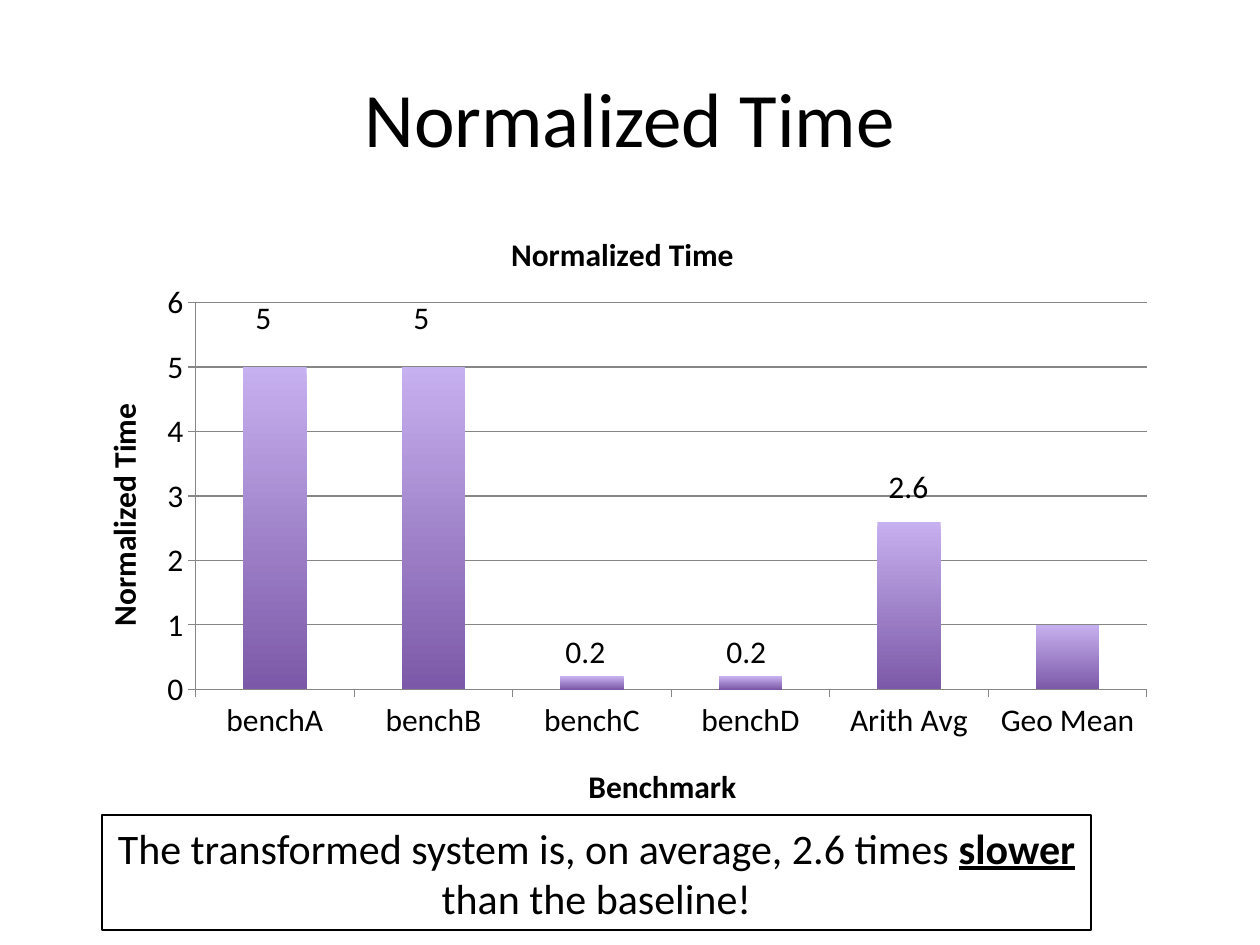
import pptx
import pptx.chart.data
import pptx.dml.color
import pptx.enum.chart
import pptx.enum.shapes
import pptx.enum.text
import pptx.oxml
import pptx.oxml.ns
import pptx.util

PX = 914400 // 126
BLACK = pptx.dml.color.RGBColor(0x00, 0x00, 0x00)
WHITE = pptx.dml.color.RGBColor(0xFF, 0xFF, 0xFF)
GREY = pptx.dml.color.RGBColor(0x86, 0x86, 0x86)
LILAC = pptx.dml.color.RGBColor(0xC7, 0xB0, 0xEF)
PURPLE = pptx.dml.color.RGBColor(0x7C, 0x59, 0xA8)
FONT = "Calibri"
CENTER = pptx.enum.text.PP_ALIGN.CENTER
MIDDLE = pptx.enum.text.MSO_ANCHOR.MIDDLE
TICK = pptx.enum.chart.XL_TICK_MARK
CATEGORIES = ["benchA", "benchB", "benchC", "benchD", "Arith Avg", "Geo Mean"]
VALUES = [5, 5, 0.2, 0.2, 2.6, 1]


def emu(box):
    return [length * PX for length in box]


def style(font, size, bold=False):
    font.name = FONT
    font.size = pptx.util.Pt(size)
    font.bold = bold
    font.color.rgb = BLACK


def add_span(para, text, size, bold=False, underline=False):
    span = para.add_run()
    span.text = text
    style(span.font, size, bold)
    span.font.underline = underline


def add_title(page, box):
    frame = page.shapes.add_textbox(*emu(box)).text_frame
    frame.word_wrap = True
    frame.vertical_anchor = MIDDLE
    para = frame.paragraphs[0]
    para.alignment = CENTER
    add_span(para, "Normalized Time", 44)


def set_layout(parent, inner=False, **fractions):
    """Place a chart part by fractions of the chart area."""
    qn = pptx.oxml.ns.qn
    old = parent.find(qn("c:layout"))
    if old is not None:
        parent.remove(old)
    target = '<c:layoutTarget val="inner"/>' if inner else ""
    modes = "".join(f'<c:{key}Mode val="edge"/>' for key in "xy")
    sizes = "".join(f'<c:{key} val="{value}"/>' for key, value in fractions.items())
    layout = pptx.oxml.parse_xml(
        f'<c:layout {pptx.oxml.ns.nsdecls("c")}><c:manualLayout>'
        f"{target}{modes}{sizes}</c:manualLayout></c:layout>")
    parent.insert(0 if parent.find(qn("c:tx")) is None else 1, layout)


def name_part(part, text, x, y):
    """Give a chart or an axis its title."""
    title = part.chart_title if hasattr(part, "chart_title") else part.axis_title
    add_span(title.text_frame.paragraphs[0], text, 18, bold=True)
    element = title.text_frame._txBody.getparent().getparent()
    set_layout(element, x=x, y=y)


def add_time_chart(page, box):
    data = pptx.chart.data.CategoryChartData()
    data.categories = CATEGORIES
    data.add_series("Normalized Time", VALUES)
    kind = pptx.enum.chart.XL_CHART_TYPE.COLUMN_CLUSTERED
    chart = page.shapes.add_chart(kind, *emu(box), data).chart
    style(chart.font, 18)
    chart.has_legend = False

    # Titles and plot area
    name_part(chart, "Normalized Time", 0.4, 0.05)
    name_part(chart.category_axis, "Benchmark", 0.47, 0.89)
    name_part(chart.value_axis, "Normalized Time", 0.03, 0.32)
    plot_area = chart.element.find(".//" + pptx.oxml.ns.qn("c:plotArea"))
    set_layout(plot_area, inner=True, x=0.12, y=0.17, w=0.86, h=0.61)

    # Axes
    for axis in (chart.category_axis, chart.value_axis):
        axis.major_tick_mark = TICK.OUTSIDE
        axis.minor_tick_mark = TICK.NONE
        axis.format.line.color.rgb = GREY
        style(axis.tick_labels.font, 18)
    scale = chart.value_axis
    scale.minimum_scale, scale.maximum_scale, scale.major_unit = 0, 6, 1
    scale.has_major_gridlines = True
    scale.major_gridlines.format.line.color.rgb = GREY

    # Bars
    plot = chart.plots[0]
    plot.gap_width = 150
    plot.vary_by_categories = False
    fill = plot.series[0].format.fill
    fill.gradient()
    fill.gradient_angle = 270
    for stop, color in zip(fill.gradient_stops, (LILAC, PURPLE)):
        stop.color.rgb = color


def add_conclusion(page, box):
    kind = pptx.enum.shapes.MSO_SHAPE.RECTANGLE
    panel = page.shapes.add_shape(kind, *emu(box))
    panel.shadow.inherit = False
    panel.fill.solid()
    panel.fill.fore_color.rgb = WHITE
    panel.line.color.rgb = BLACK
    panel.line.width = pptx.util.Pt(0.75)
    frame = panel.text_frame
    frame.word_wrap = False
    frame.vertical_anchor = MIDDLE
    first, second = frame.paragraphs[0], frame.add_paragraph()
    first.alignment = second.alignment = CENTER
    add_span(first, "The transformed system is, on average, 2.6 times ", 24)
    add_span(first, "slower", 24, bold=True, underline=True)
    add_span(second, "than the baseline!", 24)


def add_value_label(page, box, text):
    frame = page.shapes.add_textbox(*emu(box)).text_frame
    frame.word_wrap = False
    add_span(frame.paragraphs[0], text, 18)


def main():
    deck = pptx.Presentation()
    deck.slide_width, deck.slide_height = emu((1260, 945))
    page = deck.slides.add_slide(deck.slide_layouts[6])
    add_title(page, (63, 38, 1134, 157))
    add_time_chart(page, (63, 195, 1106, 634))
    add_conclusion(page, (102, 815, 989, 115))

    # Values over the bars
    labels = [(243, 292, "5"), (401, 292, "5"), (553, 626, "0.2"),
              (714, 626, "0.2"), (876, 461, "2.6")]
    for left, top, text in labels:
        add_value_label(page, (left, top, 42 if len(text) == 1 else 66, 50), text)
    deck.save("out.pptx")


if __name__ == "__main__":
    main()
